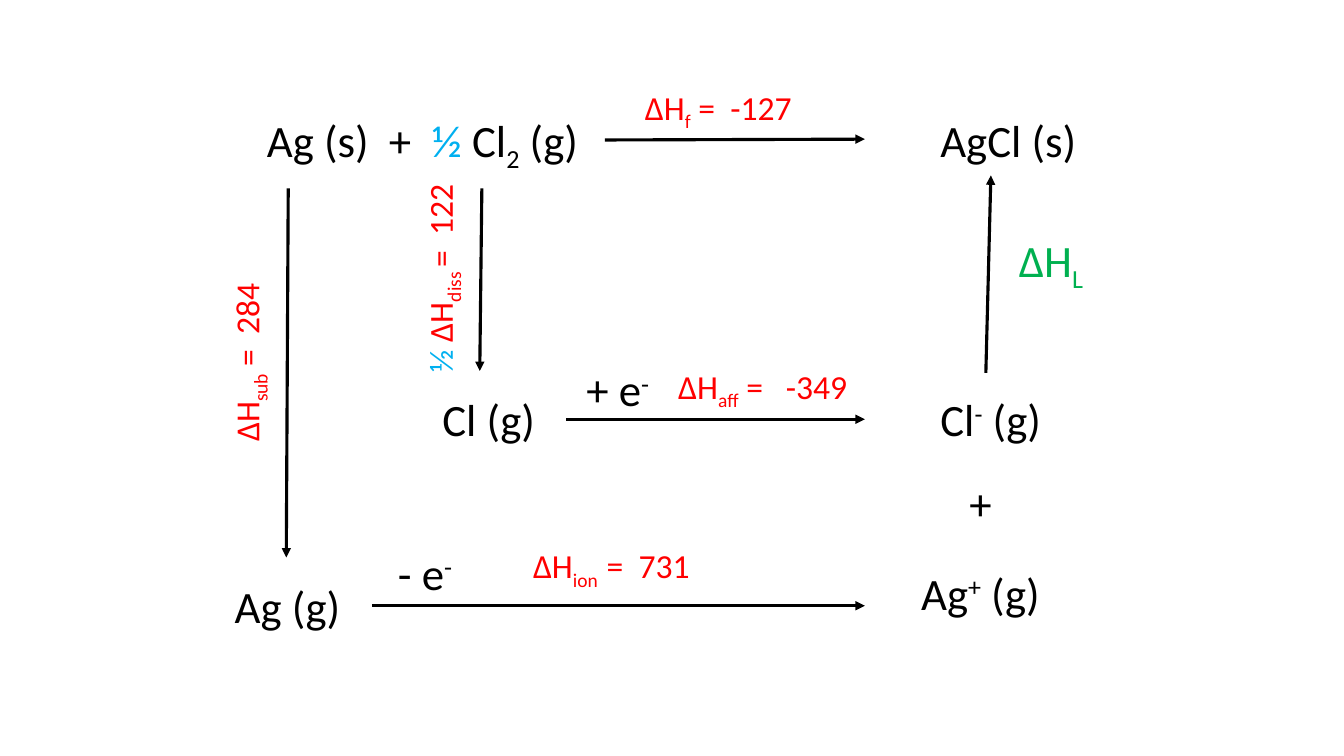
from lxml import etree
from pptx import Presentation
from pptx.dml.color import RGBColor
from pptx.enum.shapes import MSO_CONNECTOR as Connector
from pptx.enum.text import MSO_AUTO_SIZE as AutoSize
from pptx.oxml.ns import qn
from pptx.util import Pt

BLACK, RED, BLUE, GREEN = "000000", "FF0000", "00B0F0", "00B050"
SUB, SUPER = -25, 30  # baseline shift in percent
SPECIES_SIZE, ENTHALPY_SIZE = 32, 24
BOX_HEIGHT = {SPECIES_SIZE: 46, ENTHALPY_SIZE: 36}

# Each run is text, then optionally a baseline shift and a colour of its own.
# Species: left, top, width, colour, runs
REACTANTS = (183.6, 77, 248.4, BLACK,
             [("Ag (s)  +  ",), ("½", 0, BLUE), (" Cl",), ("2", SUB), (" (g)",)])
SPECIES = [
    (664.6, 77, 113, BLACK, [("AgCl (s)",)]),
    (308.9, 276.5, 82, BLACK, [("Cl (g)",)]),
    (160.6, 409.7, 90.7, BLACK, [("Ag (g)",)]),
    (664.6, 276.5, 88.6, BLACK, [("Cl",), ("-", SUPER), (" (g)",)]),
    (411.8, 254.9, 60.5, BLACK, [("+ e",), ("-", SUPER)]),
    (277.2, 385.9, 54, BLACK, [("- e",), ("-", SUPER)]),
    (650.9, 400.3, 101.5, BLACK, [("Ag",), ("+", SUPER), (" (g)",)]),
    (685.4, 336.2, 31, BLACK, [("+",)]),
    (720.7, 162.7, 62, GREEN, [("∆H",), ("L", SUB)]),
]

# Enthalpies: left, top, width, rotation, runs
ENTHALPIES = [
    (453.6, 58.3, 126, 0, [("∆H",), ("f", SUB), (" =  -127",)]),
    (107.3, 236.2, 136.8, 270, [("∆H",), ("sub", SUB), (" =  284",)]),
    (234.7, 175.7, 158.4, 270,
     [("½", 0, BLUE), (" ∆H",), ("diss ", SUB), ("=  122",)]),
    (373.7, 385.9, 136.8, 0, [("∆H",), ("ion  ", SUB), ("=  731",)]),
    (477.4, 257.8, 144, 0, [("∆H",), ("aff", SUB), (" =   -349",)]),
]

# Arrows: start x, start y, end x, end y
ARROW_END = 617.8
FORMATION = (432, 100, ARROW_END, 99.4)
ARROWS = [
    (205.9, 134.6, 204.5, 398.2),
    (344.2, 134.6, 342.7, 265),
    (404.6, 299.5, ARROW_END, 299.5),
    (265.7, 432.7, ARROW_END, 432.7),
    (704.2, 266.4, 707.8, 125.3),
]


def rgb(code):
    return RGBColor.from_string(code)


def add_label(page, left, top, width, size, color, runs, rotation=0):
    box = page.shapes.add_textbox(Pt(left), Pt(top), Pt(width), Pt(BOX_HEIGHT[size]))
    box.rotation = rotation
    frame = box.text_frame
    frame.word_wrap = False
    frame.auto_size = AutoSize.SHAPE_TO_FIT_TEXT
    para = frame.paragraphs[0]
    para.font.name = "Calibri"
    para.font.size = Pt(size)
    for text, *style in runs:
        shift, own_color = (style + [0, color][len(style):])
        span = para.add_run()
        span.text = text
        span.font.color.rgb = rgb(own_color)
        if shift:
            span.font._element.set("baseline", str(shift * 1000))
    return box


def add_arrow(page, *ends):
    arrow = page.shapes.add_connector(Connector.STRAIGHT, *map(Pt, ends))
    arrow.line.color.rgb = rgb(BLACK)
    arrow.line.width = Pt(2.25)
    etree.SubElement(arrow.line._get_or_add_ln(), qn("a:tailEnd"), type="triangle")
    etree.SubElement(arrow._element.spPr, qn("a:effectLst"))
    return arrow


def main():
    deck = Presentation()
    deck.slide_width, deck.slide_height = Pt(960), Pt(540)
    page = deck.slides.add_slide(deck.slide_layouts[6])

    left, top, width, color, runs = REACTANTS
    reactants = add_label(page, left, top, width, SPECIES_SIZE, color, runs)
    add_arrow(page, *FORMATION).begin_connect(reactants, 3)
    for ends in ARROWS:
        add_arrow(page, *ends)
    for left, top, width, color, runs in SPECIES:
        add_label(page, left, top, width, SPECIES_SIZE, color, runs)
    for left, top, width, rotation, runs in ENTHALPIES:
        add_label(page, left, top, width, ENTHALPY_SIZE, RED, runs, rotation)

    deck.save("out.pptx")


if __name__ == "__main__":
    main()
